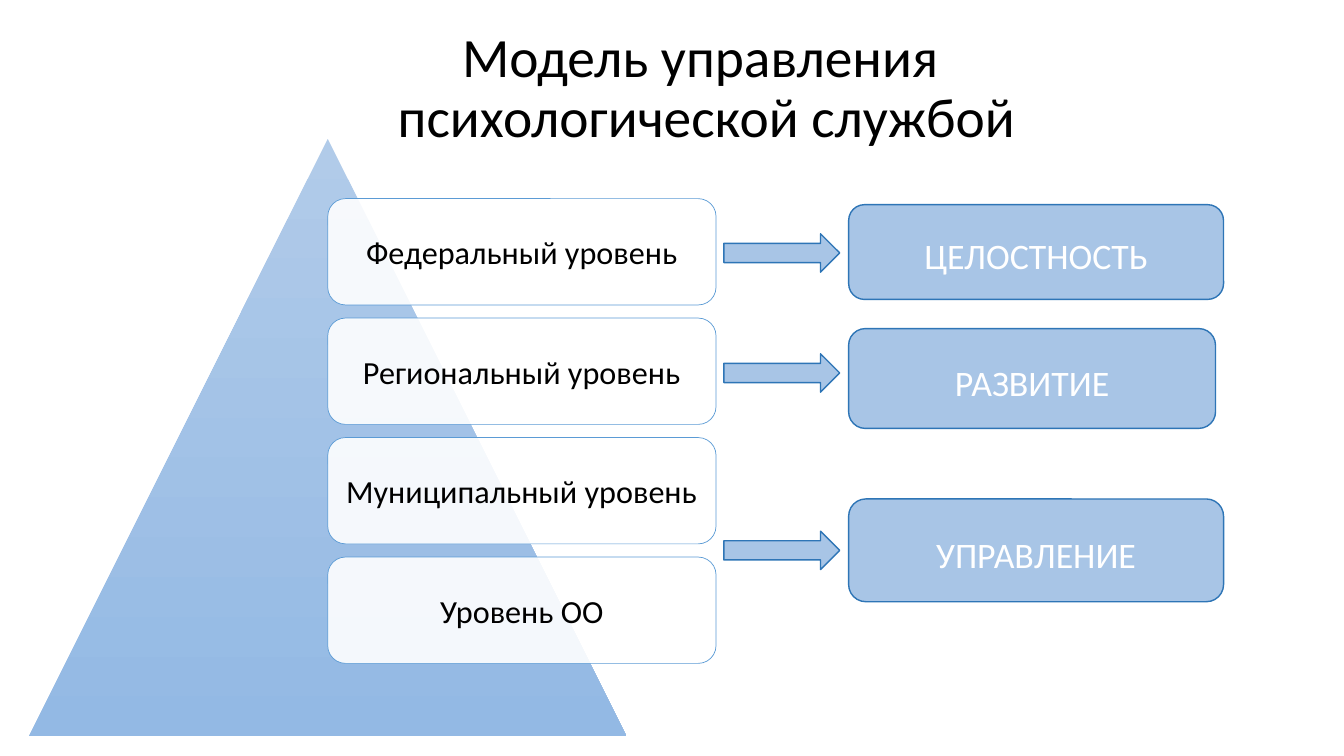
from dataclasses import dataclass

from lxml import etree
from pptx import Presentation
from pptx.dml.color import RGBColor
from pptx.enum.shapes import MSO_SHAPE
from pptx.enum.text import MSO_ANCHOR, MSO_AUTO_SIZE, PP_ALIGN
from pptx.oxml.ns import qn
from pptx.util import Pt

ARROW = MSO_SHAPE.RIGHT_ARROW
ROUND = MSO_SHAPE.ROUNDED_RECTANGLE
PEAK = MSO_SHAPE.ISOSCELES_TRIANGLE
MIDDLE = MSO_ANCHOR.MIDDLE
CENTER = PP_ALIGN.CENTER
NO_FIT = MSO_AUTO_SIZE.NONE


@dataclass(frozen=True)
class Theme:
    font: str = "Calibri"
    black: str = "000000"
    white: str = "FFFFFF"
    blue: str = "A8C5E6"
    edge: str = "2E75B6"
    rim: str = "5B9BD5"
    light: str = "B1CBE9"
    deep: str = "93B9E4"
    head: float = 39.6
    level: float = 23
    goal: float = 32


THEME = Theme()
TITLE = ("Модель управления ", "психологической службой")
LEVELS = ("Федеральный уровень", "Региональный уровень",
          "Муниципальный уровень", "Уровень ОО")
# text, top, width, height, arrow top
GOALS = (("целостность", 146.2, 267.8, 67.7, 167),
         ("развитие", 234.7, 262.1, 71.3, 252.7),
         ("управление", 356.4, 267.8, 73.4, 379.4))


def rgb(code):
    return RGBColor.from_string(code)


def add_run(para, text, size, color):
    run = para.add_run()
    run.text = text
    font = run.font
    font.name, font.size = THEME.font, Pt(size)
    font.color.rgb = rgb(color)
    return run


def add_block(slide, kind, box, fill, line, width):
    block = slide.shapes.add_shape(kind, *(Pt(n) for n in box))
    block.shadow.inherit = False
    block.fill.solid()
    block.fill.fore_color.rgb = rgb(fill)
    block.line.color.rgb = rgb(line)
    block.line.width = Pt(width)
    return block


def add_label(block, text, size, color, inset):
    frame = block.text_frame
    frame.word_wrap = True
    frame.vertical_anchor = MIDDLE
    frame.margin_left = frame.margin_right = Pt(inset)
    para = frame.paragraphs[0]
    para.alignment = CENTER
    return add_run(para, text, size, color)


def add_title(slide, box):
    title = slide.shapes.title
    title.left, title.top, title.width, title.height = (Pt(n) for n in box)
    frame = title.text_frame
    frame.word_wrap = True
    frame.auto_size = NO_FIT
    frame.vertical_anchor = MIDDLE
    para = frame.paragraphs[0]
    para.alignment, para.line_spacing = CENTER, 0.9
    first, second = TITLE
    add_run(para, first, THEME.head, THEME.black)
    para.add_line_break()
    add_run(para, second, THEME.head, THEME.black)


def add_pyramid(slide, left, top, size):
    """Draw the triangle and the level cards stacked from its axis."""
    peak = slide.shapes.add_shape(PEAK, Pt(left), Pt(top), Pt(size), Pt(size))
    peak.shadow.inherit = False
    peak.line.fill.background()
    peak.fill.gradient()
    peak.fill.gradient_angle = 270
    for stop, color in zip(peak.fill.gradient_stops, (THEME.light, THEME.deep)):
        stop.color.rgb = rgb(color)
    for i, text in enumerate(LEVELS):
        box = (left + size / 2, top + size * (0.1 + 0.2 * i),
               size * 0.65, size * 0.178)
        card = add_block(slide, ROUND, box, THEME.white, THEME.rim, 0.5)
        tint = card.fill._xPr.find(qn("a:solidFill"))[0]
        etree.SubElement(tint, qn("a:alpha")).set("val", "90000")
        add_label(card, text, THEME.level, THEME.black, 3.6)


def add_goals(slide, left, gap):
    """Draw the goal boxes, each with an arrow that starts at left."""
    wide, high = 82.8, 27.4
    for text, top, width, height, level in GOALS:
        add_block(slide, ARROW, (left, level, wide, high),
                  THEME.blue, THEME.edge, 1)
        box = (left + wide + gap, top, width, height)
        goal = add_block(slide, ROUND, box, THEME.blue, THEME.edge, 1)
        run = add_label(goal, text, THEME.goal, THEME.white, 7.2)
        run.font._element.set("cap", "small")


def main():
    deck = Presentation()
    deck.slide_width, deck.slide_height = Pt(960), Pt(540)
    slide = deck.slides.add_slide(deck.slide_layouts[5])
    add_title(slide, (115.2, 11.5, 779, 104.4))
    add_pyramid(slide, 20.8, 99.2, 426.7)
    add_goals(slide, 517, 6.4)
    deck.save("out.pptx")


if __name__ == "__main__":
    main()
